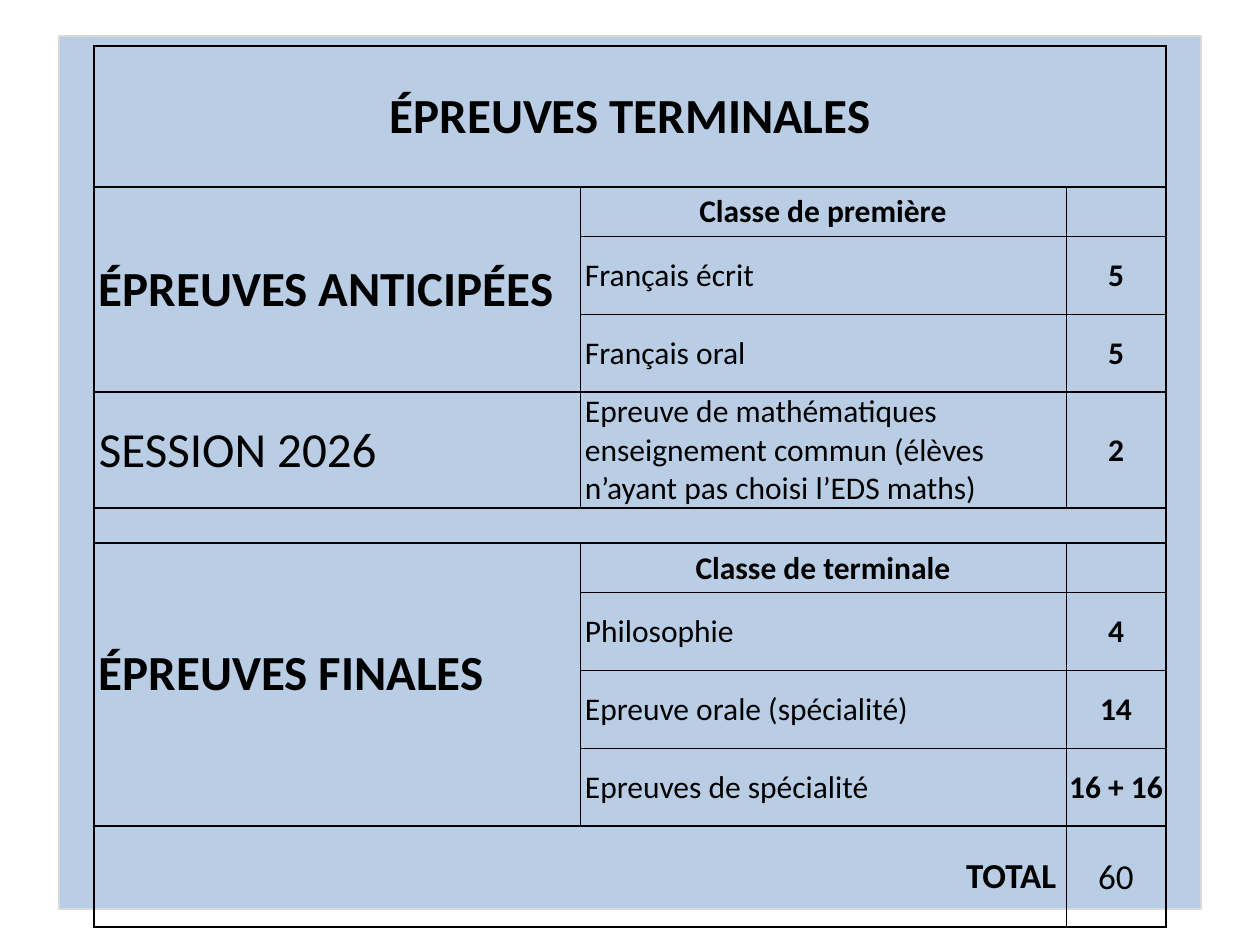
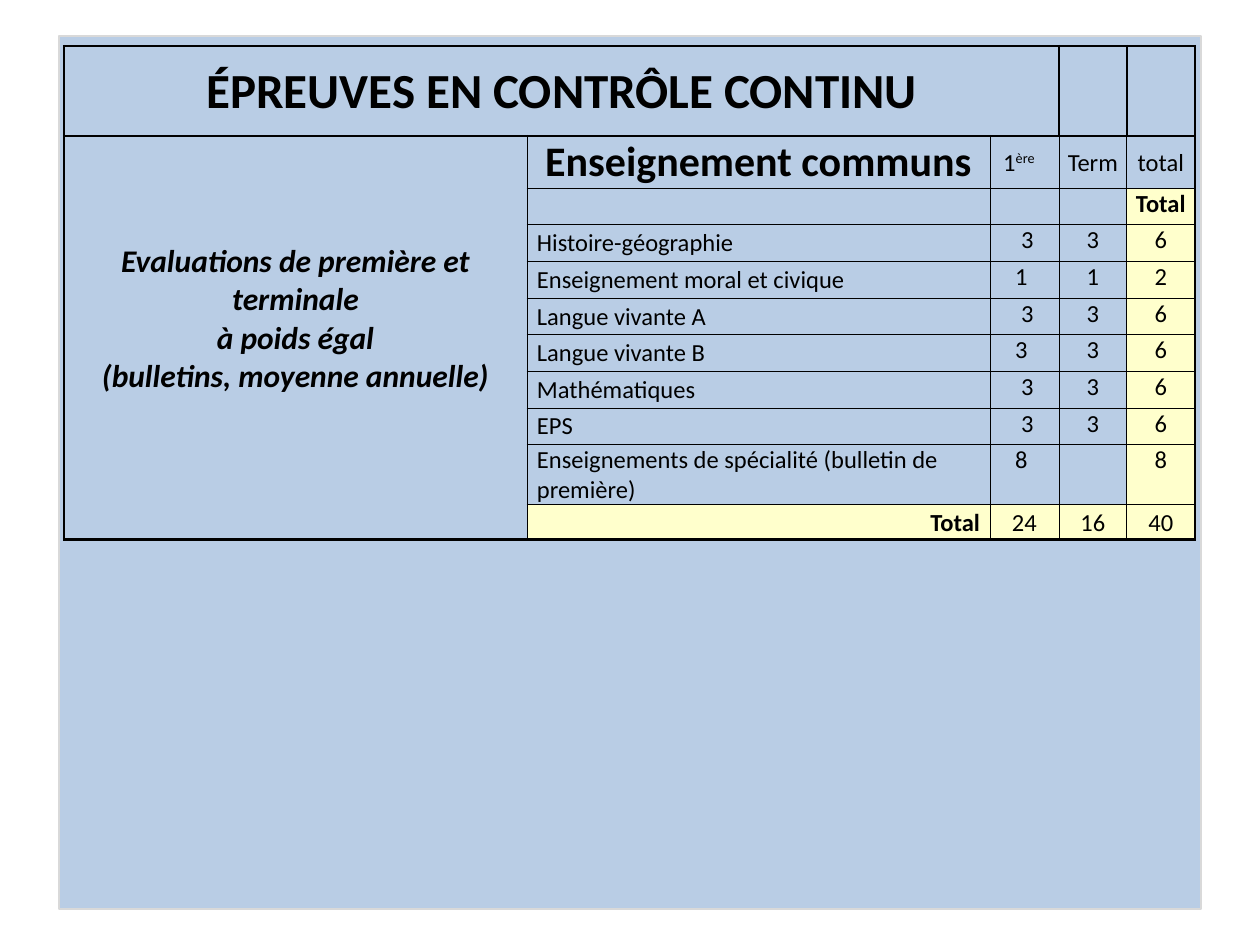
from dataclasses import dataclass, replace

from lxml import etree
from pptx import Presentation
from pptx.dml.color import RGBColor
from pptx.enum.shapes import MSO_SHAPE
from pptx.enum.text import MSO_ANCHOR, PP_ALIGN
from pptx.oxml.ns import qn
from pptx.util import Emu, Pt

LEFT, CENTER, RIGHT = PP_ALIGN.LEFT, PP_ALIGN.CENTER, PP_ALIGN.RIGHT
TOP, MIDDLE = MSO_ANCHOR.TOP, MSO_ANCHOR.MIDDLE
RECTANGLE = MSO_SHAPE.RECTANGLE
EMU_PER_PX = 914400 / 126


@dataclass(frozen=True)
class Theme:
    font: str = "Calibri"
    ink: str = "000000"
    panel: str = "B9CDE5"
    panel_line: str = "D9D9D9"
    highlight: str = "FFFFCC"
    title: int = 28
    heading: int = 24
    total: int = 20
    body: int = 18
    small: int = 14
    empty: int = 11
    thin: float = 0.5
    thick: float = 1.5


THEME = Theme()


@dataclass(frozen=True)
class Cell:
    row: int
    column: int
    text: str = ""
    size: int = THEME.body
    bold: bool = False
    italic: bool = False
    superscript: str = ""
    align: PP_ALIGN = CENTER
    anchor: MSO_ANCHOR = MIDDLE
    margins: tuple[int, int, int, int] = (1, 1, 1, 0)  # left, top, right, bottom
    rows: int = 1
    columns: int = 1
    fill: str = ""
    open_sides: str = ""


@dataclass(frozen=True)
class TableSpec:
    left: int
    top: int
    height: int
    column_widths: list[int]
    row_heights: list[int]
    thick_rows: set[int]  # row boundaries drawn with the thick line
    cells: list[Cell]


def px(length: int) -> Emu:
    return Emu(round(length * EMU_PER_PX))


def add_text(paragraph, text: str, *, size: int, bold: bool = False,
             italic: bool = False, superscript: bool = False) -> None:
    """Append text to the paragraph, one line break per newline."""
    for index, line in enumerate(text.split("\n")):
        if index:
            paragraph.add_line_break()
        run = paragraph.add_run()
        run.text = line
        font = run.font
        font.name, font.size = THEME.font, Pt(size)
        font.bold, font.italic = bold, italic
        font.color.rgb = RGBColor.from_string(THEME.ink)
        if superscript:
            run._r.get_or_add_rPr().set("baseline", "30000")


def add_panel(slide) -> None:
    panel = slide.shapes.add_shape(RECTANGLE, px(59), px(36), px(1142), px(873))
    panel.shadow.inherit = False
    panel.fill.solid()
    panel.fill.fore_color.rgb = RGBColor.from_string(THEME.panel)
    panel.line.color.rgb = RGBColor.from_string(THEME.panel_line)
    panel.line.width = Pt(0.75)


def draw_border(table_cell, side: str, width: float) -> None:
    """Draw one side (L, R, T or B); a width of 0 leaves it open."""
    line = etree.SubElement(table_cell._tc.get_or_add_tcPr(), qn(f"a:ln{side}"),
                            w=str(Pt(width)))
    if not width:
        etree.SubElement(line, qn("a:noFill"))
        return
    fill = etree.SubElement(line, qn("a:solidFill"))
    etree.SubElement(fill, qn("a:srgbClr"), val=THEME.ink)


def draw_borders(table, spec: TableSpec, cell: Cell) -> None:
    """Border a cell, spreading a merged cell's outline over its grid cells."""
    bottom, right = cell.row + cell.rows, cell.column + cell.columns
    outer_columns = {0, len(spec.column_widths)}

    def width(side: str) -> float:
        if side in cell.open_sides:
            return 0
        if side in "TB":
            thick = (cell.row if side == "T" else bottom) in spec.thick_rows
        else:
            boundary = cell.column if side == "L" else right
            thick = cell.row == 0 or boundary in outer_columns
        return THEME.thick if thick else THEME.thin

    for row in range(cell.row, bottom):
        for column in range(cell.column, right):
            origin = (row, column) == (cell.row, cell.column)
            on_outline = {"L": column == cell.column, "R": column == right - 1,
                          "T": row == cell.row, "B": row == bottom - 1}
            for side, outlined in on_outline.items():
                draw_border(table.cell(row, column), side,
                            width(side) if origin or outlined else 0)


def fill_cell(table, spec: TableSpec, cell: Cell) -> None:
    target = table.cell(cell.row, cell.column)
    if cell.rows * cell.columns > 1:
        target.merge(table.cell(cell.row + cell.rows - 1, cell.column + cell.columns - 1))
    draw_borders(table, spec, cell)
    if cell.fill:
        target.fill.solid()
        target.fill.fore_color.rgb = RGBColor.from_string(cell.fill)
    else:
        target.fill.background()
    target.vertical_anchor = cell.anchor
    (target.margin_left, target.margin_top,
     target.margin_right, target.margin_bottom) = map(px, cell.margins)
    paragraph = target.text_frame.paragraphs[0]
    paragraph.alignment = cell.align
    if not cell.text:
        etree.SubElement(paragraph._p, qn("a:endParaRPr"), sz=str(THEME.empty * 100))
        return
    add_text(paragraph, cell.text, size=cell.size, bold=cell.bold, italic=cell.italic)
    if cell.superscript:
        add_text(paragraph, cell.superscript, size=cell.size, superscript=True)


def add_exam_table(slide, spec: TableSpec) -> None:
    row_count, column_count = len(spec.row_heights), len(spec.column_widths)
    frame = slide.shapes.add_table(row_count, column_count, px(spec.left), px(spec.top),
                                   px(sum(spec.column_widths)), px(spec.height))
    table = frame.table
    table.first_row = table.horz_banding = False
    for column, width in zip(table.columns, spec.column_widths):
        column.width = px(width)
    for row, height in zip(table.rows, spec.row_heights):
        row.height = px(height)
    frame.height = px(spec.height)

    covered = {(row, column) for cell in spec.cells
               for row in range(cell.row, cell.row + cell.rows)
               for column in range(cell.column, cell.column + cell.columns)}
    empty_cells = [Cell(row, column) for row in range(row_count)
                   for column in range(column_count) if (row, column) not in covered]
    for cell in spec.cells + empty_cells:
        fill_cell(table, spec, cell)


def final_exams() -> TableSpec:
    inset = (5, 1, 5, 0)
    section = Cell(0, 0, size=THEME.title, bold=True, align=LEFT, margins=inset)
    cells = [
        Cell(0, 0, "ÉPREUVES TERMINALES", THEME.title, bold=True, columns=3),
        replace(section, row=1, text="ÉPREUVES ANTICIPÉES", rows=3),
        Cell(1, 1, "Classe de première", bold=True),
        replace(section, row=4, text="SESSION 2026", bold=False),
        Cell(5, 0, columns=3),
        replace(section, row=6, text="ÉPREUVES FINALES", rows=4, margins=(5, 1, 5, 23)),
        Cell(6, 1, "Classe de terminale", bold=True),
        Cell(10, 0, open_sides="R"),
        Cell(10, 1, "TOTAL", THEME.total, bold=True, align=RIGHT,
             margins=(10, 0, 10, 0), open_sides="L"),
        Cell(10, 2, "60", THEME.total),
    ]
    exams = [
        (2, "Français écrit", "5"),
        (3, "Français oral", "5"),
        (4, "Epreuve de mathématiques enseignement commun "
            "(élèves n’ayant pas choisi l’EDS maths)", "2"),
        (7, "Philosophie", "4"),
        (8, "Epreuve orale (spécialité)", "14"),
        (9, "Epreuves de spécialité", "16 + 16"),
    ]
    for row, exam, weight in exams:
        cells += [Cell(row, 1, exam, align=LEFT, margins=inset),
                  Cell(row, 2, weight, bold=True)]
    return TableSpec(94, 46, 881, [486, 486, 100],
                     [141, 49, 78, 78, 78, 35, 49, 78, 78, 78, 101],
                     {0, 1, 4, 5, 6, 10, 11}, cells)


def continuous_assessment() -> TableSpec:
    small, highlight = THEME.small, THEME.highlight
    nudge_right, nudge_left = (7, 1, 1, 0), (1, 1, 7, 0)
    cells = [
        Cell(0, 0, "ÉPREUVES EN CONTRÔLE CONTINU", THEME.title, bold=True, columns=3),
        Cell(1, 0, "Evaluations de première et terminale\nà poids égal\n"
                   "(bulletins, moyenne annuelle)",
             bold=True, italic=True, rows=10, margins=(1, 1, 1, 38)),
        Cell(1, 1, "Enseignement communs", THEME.heading, bold=True),
        Cell(1, 2, "1", small, superscript="ère", margins=(1, 1, 12, 0)),
        Cell(1, 3, "Term", small),
        Cell(1, 4, "total", small),
        Cell(2, 4, "Total", small, bold=True, anchor=TOP, fill=highlight),
        Cell(10, 1, "Total", small, bold=True, align=RIGHT,
             margins=(1, 1, 10, 0), fill=highlight),
    ]
    cells += [Cell(10, column, total, small, fill=highlight)
              for column, total in enumerate(("24", "16", "40"), start=2)]
    subjects = [
        ("Histoire-géographie", "3", "3", "6", nudge_right),
        ("Enseignement moral et civique", "1", "1", "2", nudge_left),
        ("Langue vivante A", "3", "3", "6", nudge_right),
        ("Langue vivante B", "3", "3", "6", nudge_left),
        ("Mathématiques", "3", "3", "6", nudge_right),
        ("EPS", "3", "3", "6", nudge_right),
        ("Enseignements de spécialité (bulletin de première)", "8", "", "8", nudge_left),
    ]
    for row, (subject, first_year, final_year, total, nudge) in enumerate(subjects, start=3):
        cells += [
            Cell(row, 1, subject, small, align=LEFT, margins=(10, 1, 1, 0)),
            Cell(row, 2, first_year, small, anchor=TOP, margins=nudge),
            Cell(row, 3, final_year, small, anchor=TOP),
            Cell(row, 4, total, small, anchor=TOP, fill=highlight),
        ]
    return TableSpec(64, 46, 493, [463, 463, 69, 68, 68],
                     [90, 52, 36] + [37, 37, 36] * 2 + [37, 35], {0, 1, 11}, cells)


def main() -> None:
    presentation = Presentation()
    presentation.slide_width, presentation.slide_height = px(1260), px(945)
    blank_layout = presentation.slide_layouts[6]
    for spec in (final_exams(), continuous_assessment()):
        slide = presentation.slides.add_slide(blank_layout)
        add_panel(slide)
        add_exam_table(slide, spec)
    presentation.save("out.pptx")


if __name__ == "__main__":
    main()
